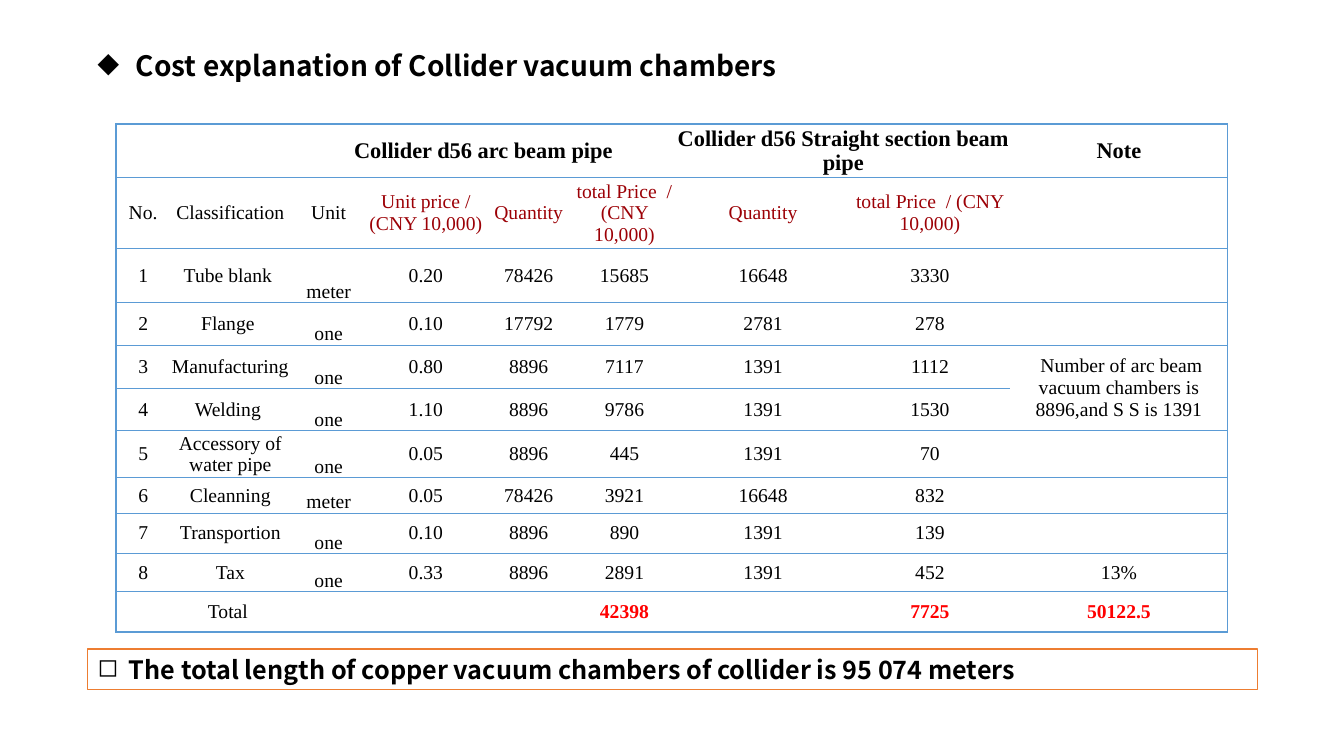
from lxml import etree
from pptx import Presentation
from pptx import util as u
from pptx.dml.color import RGBColor
from pptx.enum import shapes, text
from pptx.oxml.ns import qn

HEADING_FONT, TABLE_FONT = "Noto Sans CJK SC", "Times New Roman"
BLACK, WHITE, BLUE, ORANGE = "000000", "FFFFFF", "5B9BD5", "ED7D31"
DARK_RED, RED = "9C0006", "FF0000"

COLUMN_WIDTHS = [0.54, 1.19, 0.76, 1.17, 0.87, 1.03, 1.72, 1.59, 2.16]
ROW_HEIGHTS = [0.44, 0.49, 0.54, 0.42, 0.43, 0.42, 0.37, 0.35, 0.4, 0.38, 0.4]
TOTAL_PRICE = "total Price  / (CNY 10,000)"
COSTS = [
    ["", "", "Collider d56 arc beam pipe", "", "", "",
     "Collider d56 Straight section beam pipe", "", "Note"],
    ["No.", "Classification", "Unit", "Unit price / (CNY 10,000)", "Quantity",
     TOTAL_PRICE, "Quantity", TOTAL_PRICE, ""],
    ["1", "Tube blank ", "meter", "0.20", "78426", "15685", "16648", "3330", ""],
    ["2", "Flange ", "one", "0.10", "17792", "1779", "2781", "278", ""],
    ["3", "Manufacturing", "one", "0.80", "8896", "7117", "1391", "1112",
     " Number of arc beam vacuum chambers is 8896,and S S is 1391"],
    ["4", "Welding ", "one", "1.10", "8896", "9786", "1391", "1530", ""],
    ["5", "Accessory of water pipe", "one", "0.05", "8896", "445", "1391", "70", ""],
    ["6", "Cleanning", "meter", "0.05", "78426", "3921", "16648", "832", ""],
    ["7", "Transportion", "one", "0.10", "8896", "890", "1391", "139", ""],
    ["8", "Tax", "one", "0.33", "8896", "2891", "1391", "452", "13%"],
    ["", "Total ", "", "", "", "42398", "", "7725", "50122.5"],
]
LAST_ROW, LAST_COLUMN = len(ROW_HEIGHTS) - 1, len(COLUMN_WIDTHS) - 1
UNIT_COLUMN = 2
# First and last cell of each merged block, as (row, column)
MERGES = [((0, 2), (0, 5)), ((0, 6), (0, 7)), ((4, 8), (5, 8))]


def rgb(color):
    return RGBColor.from_string(color)


def format_runs(paragraph, font_name, size, color, bold):
    for run in paragraph.runs:
        run.font.name = font_name
        run.font.size = u.Pt(size)
        run.font.color.rgb = rgb(color)
        run.font.bold = bold


def add_bullet_line(shape, wording, bullet, indent, size):
    """Fill a shape with one bold line that hangs from a bullet."""
    frame = shape.text_frame
    frame.text = wording
    frame.word_wrap = True
    frame.vertical_anchor = text.MSO_ANCHOR.MIDDLE
    paragraph = frame.paragraphs[0]
    paragraph.alignment = text.PP_ALIGN.LEFT
    properties = paragraph._p.get_or_add_pPr()
    properties.set("marL", str(u.Inches(indent)))
    properties.set("indent", str(-u.Inches(indent)))
    etree.SubElement(properties, qn("a:buChar"), char=bullet)
    format_runs(paragraph, HEADING_FONT, size, BLACK, True)


def add_title(slide, left, top, width, height):
    box = slide.shapes.add_textbox(*map(u.Inches, (left, top, width, height)))
    add_bullet_line(box, "Cost explanation of Collider vacuum chambers", "◆", 0.38, 20)


def add_length_note(slide, left, top, width, height):
    box = slide.shapes.add_shape(
        shapes.MSO_SHAPE.RECTANGLE, *map(u.Inches, (left, top, width, height)))
    box.shadow.inherit = False
    box.fill.solid()
    box.fill.fore_color.rgb = rgb(WHITE)
    box.line.color.rgb = rgb(ORANGE)
    box.line.width = u.Pt(1)
    add_bullet_line(
        box, "The total length of copper vacuum chambers of collider is 95 074 meters",
        "◻", 0.31, 18)


def set_borders(cell, visible):
    """Draw the visible sides (letters of LRTB) in blue and clear the others."""
    properties = cell._tc.get_or_add_tcPr()
    for side in "LRTB":
        line = etree.SubElement(properties, qn(f"a:ln{side}"), w=str(u.Pt(1)))
        if side in visible:
            fill = etree.SubElement(line, qn("a:solidFill"))
            etree.SubElement(fill, qn("a:srgbClr"), val=BLUE)
        else:
            etree.SubElement(line, qn("a:noFill"))


def cell_style(row, column):
    """Return size, colour and weight for a cell's text."""
    if row == 0:
        return 16, BLACK, True
    if row == 1 and column > UNIT_COLUMN:
        return 14, DARK_RED, False
    if row == LAST_ROW and column > UNIT_COLUMN:
        return 14, RED, True
    return 14, BLACK, False


def format_cell(cell, row, column, wording):
    sides = "TB"
    if column == 0:
        sides += "L"
    elif column == LAST_COLUMN:
        sides += "R"
    if cell.is_spanned and column == LAST_COLUMN:
        sides = "RB"
    set_borders(cell, sides)
    cell.fill.solid()
    cell.fill.fore_color.rgb = rgb(WHITE)
    cell.margin_left = cell.margin_right = cell.margin_top = cell.margin_bottom = 0
    is_unit = column == UNIT_COLUMN and row > 1
    cell.vertical_anchor = text.MSO_ANCHOR.BOTTOM if is_unit else text.MSO_ANCHOR.MIDDLE
    if wording:
        cell.text_frame.text = wording
        paragraph = cell.text_frame.paragraphs[0]
        paragraph.alignment = text.PP_ALIGN.CENTER
        format_runs(paragraph, TABLE_FONT, *cell_style(row, column))


def add_cost_table(slide, left, top):
    frame = slide.shapes.add_table(
        len(ROW_HEIGHTS), len(COLUMN_WIDTHS), u.Inches(left), u.Inches(top),
        u.Inches(sum(COLUMN_WIDTHS)), u.Inches(sum(ROW_HEIGHTS)))
    table = frame.table
    table.first_row = table.horz_banding = False
    for column, width in zip(table.columns, COLUMN_WIDTHS):
        column.width = u.Inches(width)
    for row, height in zip(table.rows, ROW_HEIGHTS):
        row.height = u.Inches(height)
    for first, last in MERGES:
        table.cell(*first).merge(table.cell(*last))
    for row, wordings in enumerate(COSTS):
        for column, wording in enumerate(wordings):
            format_cell(table.cell(row, column), row, column, wording)


def main():
    presentation = Presentation()
    presentation.slide_width = u.Inches(13.33)
    presentation.slide_height = u.Inches(7.5)
    slide = presentation.slides.add_slide(presentation.slide_layouts[6])
    add_title(slide, 0.87, 0.43, 9.34, 0.44)
    add_length_note(slide, 0.87, 6.44, 11.6, 0.4)
    add_cost_table(slide, 1.15, 1.23)
    presentation.save("out.pptx")


if __name__ == "__main__":
    main()
